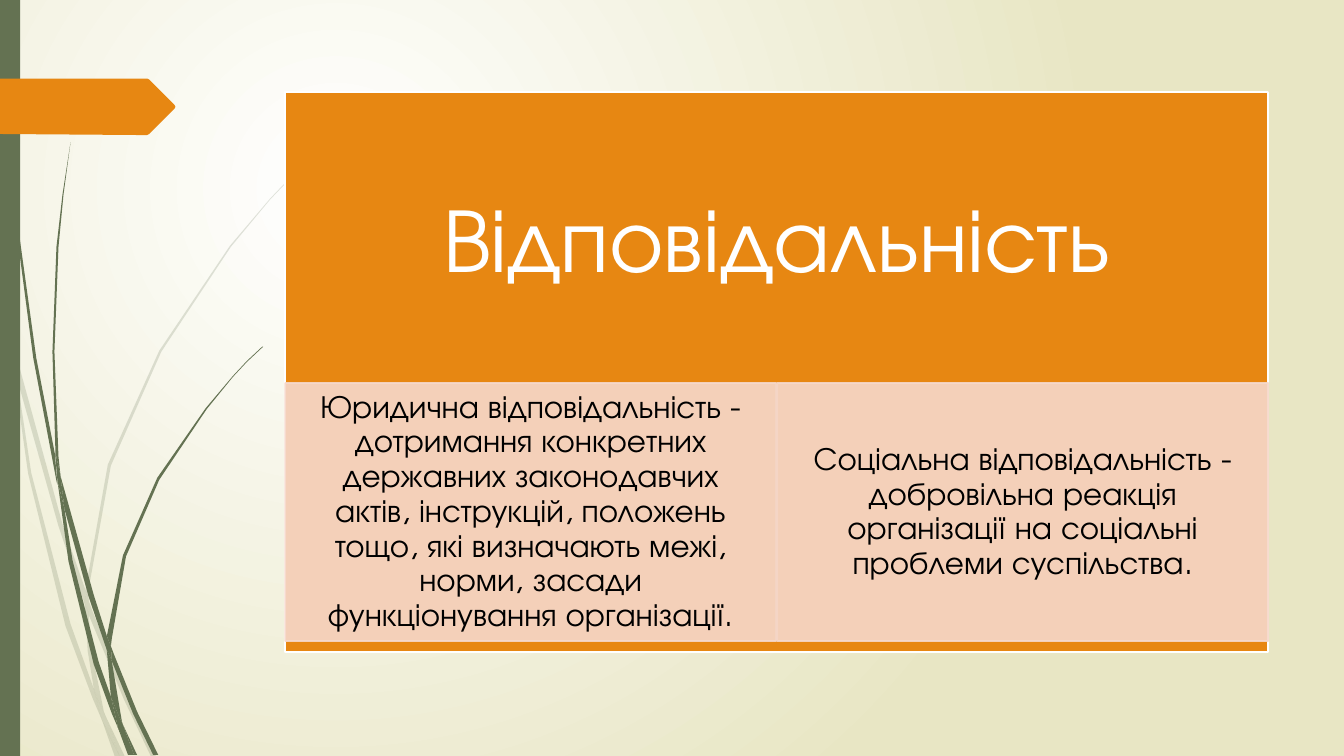
from dataclasses import dataclass

from lxml.etree import SubElement
from pptx import Presentation
from pptx.dml.color import RGBColor
from pptx.enum.shapes import MSO_SHAPE
from pptx.enum.text import MSO_ANCHOR, MSO_AUTO_SIZE, PP_ALIGN
from pptx.oxml.ns import qn
from pptx.util import Pt

EMU_PER_PX = 9144  # 100 px to the inch
SLIDE_W, SLIDE_H = 1333, 750
FONT = "TeX Gyre Adventor"
COLORS = {
    "orange": "E78712", "peach": "F6D9CC", "green": "647252",
    "white": "FFFFFF", "black": "000000", "cream": "E8E6C4",
}
Point = tuple[int, int]


@dataclass(frozen=True)
class Panel:
    box: tuple[int, int, int, int]
    fill: str
    line: str | None = None
    opacity: int = 100


@dataclass(frozen=True)
class Outline:
    points: tuple[Point, ...]
    fill: str = "green"
    opacity: int = 100


@dataclass(frozen=True)
class Caption:
    text: str
    size: int
    color: str
    inset_x: int
    inset_y: int


# Grass: each blade is a chain of thin pieces
PALE_GRASS = (
    ((11, 350), (9, 322), (0, 282), (0, 299), (10, 344)),
    ((58, 522), (84, 599), (85, 586), (62, 520), (14, 345), (17, 376)),
    ((92, 607), (88, 596), (88, 610), (123, 694), (150, 751), (155, 751), (127, 692)),
    ((119, 751), (124, 751), (105, 711)),
    ((93, 683), (70, 619), (31, 469), (17, 376), (11, 350), (28, 470), (65, 621),
     (92, 693), (101, 714), (99, 707)),
    ((84, 599), (87, 646), (93, 683), (96, 692), (105, 711), (103, 706), (91, 646),
     (88, 610), (88, 608)),
    ((88, 584), (110, 462), (160, 349), (229, 245), (268, 198), (290, 175), (312, 154),
     (312, 153), (289, 175), (268, 197), (228, 244), (158, 348), (107, 461), (85, 584),
     (85, 586), (88, 596)),
    ((101, 714), (114, 751), (119, 751)),
    ((88, 608), (88, 610), (88, 596), (85, 586), (84, 599)),
    ((96, 692), (93, 683), (99, 707), (101, 714), (119, 751), (105, 711)),
)
DARK_GRASS = (
    ((7, 110), (17, 233), (33, 355), (56, 477), (57, 481), (55, 457), (55, 453),
     (36, 355), (19, 232), (8, 109), (5, 48), (4, 0), (3, 0), (4, 48)),
    ((88, 592), (106, 645), (106, 633), (106, 631), (93, 590), (60, 472), (64, 505)),
    ((113, 649), (110, 641), (111, 656), (132, 708), (152, 749), (157, 749), (136, 706)),
    ((110, 691), (98, 657), (72, 556), (64, 505), (57, 477), (68, 557), (93, 659),
     (111, 708), (117, 722), (116, 717)),
    ((60, 472), (58, 453), (54, 349), (58, 245), (63, 193), (70, 141), (62, 193),
     (56, 245), (52, 349), (55, 449)),
    ((133, 749), (136, 749), (122, 719)),
    ((57, 477), (64, 505), (60, 472), (55, 449), (55, 453)),
    ((111, 633), (125, 552), (158, 476), (205, 406), (231, 374), (245, 359), (261, 344),
     (260, 344), (245, 358), (231, 373), (204, 405), (156, 474), (122, 551), (106, 631),
     (110, 641)),
    ((117, 722), (127, 749), (131, 749)),
    ((106, 645), (110, 691), (116, 706), (122, 719), (121, 716), (111, 656), (109, 651)),
    ((106, 645), (109, 651), (111, 656), (110, 641), (106, 631), (106, 633)),
    ((116, 706), (110, 691), (116, 717), (117, 722), (130, 749), (133, 749), (122, 719)),
)
FLAG = ((0, 78), (146, 78), (148, 79), (173, 104), (174, 106), (173, 108), (148, 133),
        (146, 134), (136, 134), (0, 133))

# Responsibility board
BOARD_X, BOARD_Y, BOARD_W, BOARD_H = 283, 91, 975, 556
HEADING_H = 300
CARD_Y, CARD_W, CARD_H, CARD_STEP = 380, 487, 256, 488
HEADING = Caption("Відповідальність", 65, "white", 51, 51)
CARD_TEXTS = (
    "Юридична відповідальність - дотримання конкретних державних законодавчих актів, "
    "інструкцій, положень тощо, які визначають межі, норми, засади функціонування організації.",
    "Соціальна відповідальність - добровільна реакція організації на соціальні "
    "проблеми суспільства.",
)


def px(length: int) -> int:
    return length * EMU_PER_PX


def rgb(name: str) -> RGBColor:
    return RGBColor.from_string(COLORS[name])


def place(shape, box: tuple[int, int, int, int]) -> None:
    for side, length in zip(("left", "top", "width", "height"), box):
        setattr(shape, side, px(length))


def paint(shape, fill: str, line: str | None, opacity: int) -> None:
    shape.shadow.inherit = False
    shape.fill.solid()
    shape.fill.fore_color.rgb = rgb(fill)
    if line:
        shape.line.color.rgb = rgb(line)
        shape.line.width = Pt(1.25)
    else:
        shape.line.fill.background()
    if opacity < 100:
        for color in list(shape.element.spPr.iter(qn("a:srgbClr"))):
            SubElement(color, qn("a:alpha"), val=str(opacity * 1000))


def draw_panel(shapes, panel: Panel):
    shape = shapes.add_shape(MSO_SHAPE.RECTANGLE, *map(px, panel.box))
    paint(shape, panel.fill, panel.line, panel.opacity)
    return shape


def draw_outline(shapes, outline: Outline) -> None:
    start, *rest = outline.points
    builder = shapes.build_freeform(*start, scale=EMU_PER_PX)
    builder.add_line_segments(rest, close=True)
    paint(builder.convert_to_shape(), outline.fill, None, outline.opacity)


def write_caption(shape, caption: Caption) -> None:
    frame = shape.text_frame
    frame.text = caption.text
    paragraph = frame.paragraphs[0]
    font = paragraph.runs[0].font
    formats = (
        (frame, {"word_wrap": True, "auto_size": MSO_AUTO_SIZE.NONE,
                 "vertical_anchor": MSO_ANCHOR.MIDDLE,
                 "margin_left": px(caption.inset_x), "margin_right": px(caption.inset_x),
                 "margin_top": px(caption.inset_y), "margin_bottom": px(caption.inset_y)}),
        (paragraph, {"alignment": PP_ALIGN.CENTER, "line_spacing": 0.9}),
        (font, {"name": FONT, "size": Pt(caption.size)}),
    )
    for target, values in formats:
        for attribute, value in values.items():
            setattr(target, attribute, value)
    font.color.rgb = rgb(caption.color)


def paint_background(slide) -> None:
    fill = slide.background.fill
    fill.gradient()
    for stop, name in zip(fill.gradient_stops, ("white", "cream")):
        stop.color.rgb = rgb(name)
    gradient = next(slide.element.iter(qn("a:gradFill")))
    gradient.remove(gradient.find(qn("a:lin")))
    glow = SubElement(gradient, qn("a:path"), path="circle")
    SubElement(glow, qn("a:fillToRect"), l="50000", t="50000", r="100000", b="100000")


def main() -> None:
    deck = Presentation()
    deck.slide_width, deck.slide_height = px(SLIDE_W), px(SLIDE_H)
    slide = deck.slides.add_slide(deck.slide_layouts.get_by_name("Title Only"))
    shapes = slide.shapes
    paint_background(slide)

    # Side decoration
    for points in PALE_GRASS:
        draw_outline(shapes, Outline(points, opacity=20))
    for points in DARK_GRASS:
        draw_outline(shapes, Outline(points))
    draw_panel(shapes, Panel((0, 0, 20, SLIDE_H), "green"))
    draw_outline(shapes, Outline(FLAG, "orange"))

    # Board with its heading brought in front
    draw_panel(shapes, Panel((BOARD_X, BOARD_Y, BOARD_W, BOARD_H), "orange", "white"))
    heading = shapes.title
    shapes.element.append(heading.element)
    place(heading, (BOARD_X, BOARD_Y, BOARD_W, HEADING_H))
    write_caption(heading, HEADING)

    # Two kinds of responsibility
    for column, text in enumerate(CARD_TEXTS):
        box = (BOARD_X + column * CARD_STEP, CARD_Y, CARD_W, CARD_H)
        card = draw_panel(shapes, Panel(box, "peach", "peach", 90))
        write_caption(card, Caption(text, 23, "black", 18, 3))

    deck.save("out.pptx")


if __name__ == "__main__":
    main()
